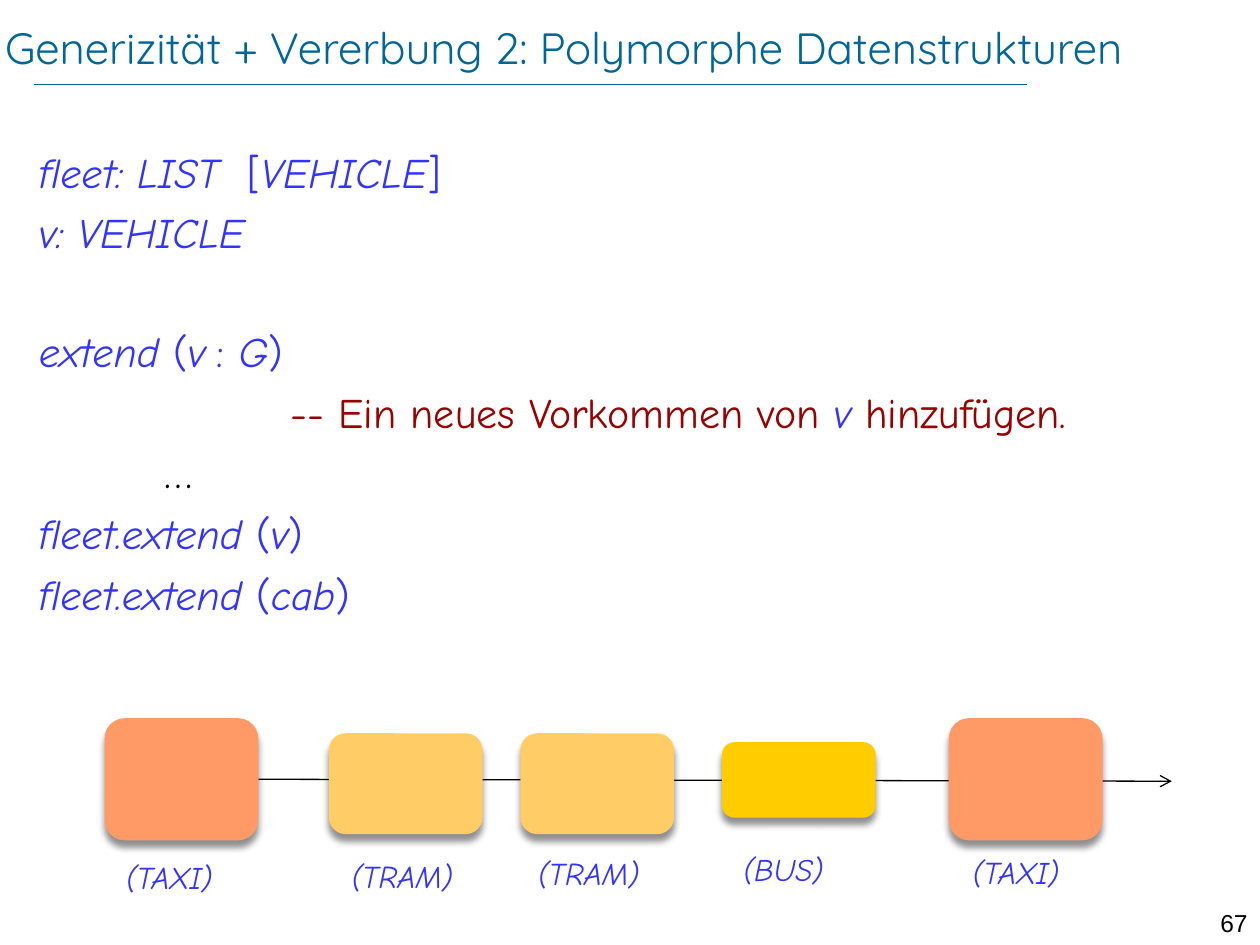
from dataclasses import dataclass

from lxml.etree import SubElement
from pptx import Presentation
from pptx.dml.color import RGBColor
from pptx.enum.shapes import MSO_CONNECTOR, MSO_SHAPE
from pptx.enum.text import MSO_ANCHOR, PP_ALIGN
from pptx.oxml.ns import qn
from pptx.util import Inches, Pt


@dataclass(frozen=True)
class Theme:
    title: str = "006699"
    code: str = "3333FF"
    comment: str = "990000"
    black: str = "000000"
    taxi: str = "FF9966"
    tram: str = "FFCC66"
    bus: str = "FFCC00"
    title_font: str = "Quicksand"
    body_font: str = "Comic Neue"
    number_font: str = "Arial"
    title_size: float = 25
    body_size: float = 24
    small_size: float = 20
    label_size: float = 18
    number_size: float = 14


THEME = Theme()
COLS, ROWS = 100, 75
LINE_GAP, BLANK_LINE = 5.8, 33.5

CODE = dict(name=THEME.body_font, size=THEME.body_size, color=THEME.code, italic=False)
NAME = CODE | dict(italic=True)
COMMENT = CODE | dict(color=THEME.comment)
PLAIN = CODE | dict(color=THEME.black)
LABEL = NAME | dict(size=THEME.label_size)
TITLE = dict(name=THEME.title_font, size=THEME.title_size, color=THEME.title)
NUMBER = dict(name=THEME.number_font, size=THEME.number_size, color=THEME.black)

# Each line: indent in inches, extra space before in points, runs
LISTING = [
    (0, 0, [("fleet: LIST", NAME), ("  [", CODE), ("VEHICLE", NAME), ("]", CODE)]),
    (0, 0, [("v: VEHICLE", NAME)]),
    (0, BLANK_LINE, [("extend", NAME), (" (", CODE), ("v", NAME),
                     (" ", NAME | dict(size=THEME.small_size)), (": ", CODE),
                     ("G", NAME), (")", CODE)]),
    (2, 0, [("-- Ein neues Vorkommen von ", COMMENT), ("v", NAME),
            (" hinzufügen.", COMMENT)]),
    (1, 0, [("…", PLAIN)]),
    (0, 0, [("fleet.extend ", NAME), ("(", CODE), ("v", NAME), (")", CODE)]),
    (0, 0, [("fleet.extend ", NAME), ("(", CODE), ("cab", NAME), (")", CODE)]),
]

# Kind: fill, top and height of the box, width of the label
KINDS = {
    "TAXI": (THEME.taxi, 57, 9.7, 10.6),
    "TRAM": (THEME.tram, 58.2, 8, 11.2),
    "BUS": (THEME.bus, 58.9, 6, 9.1),
}
BOX_WIDTH = 12.2
# Kind, left of the box, left and top of the label
FLEET = [
    ("TAXI", 8.3, 9, 67.6),
    ("TRAM", 26.1, 26.9, 67.5),
    ("TRAM", 41.3, 41.7, 67.3),
    ("BUS", 57.3, 58, 67),
    ("TAXI", 75.3, 76.2, 67.2),
]


class SlideBuilder:
    def __init__(self, prs):
        self.prs = prs
        self.s = prs.slides.add_slide(prs.slide_layouts[6])

    def grid(self, *lengths):
        """Turn alternating columns and rows into slide lengths."""
        units = (self.prs.slide_width / COLS, self.prs.slide_height / ROWS)
        return [round(n * units[i % 2]) for i, n in enumerate(lengths)]

    def text(self, box, lines, wrap=True, align=PP_ALIGN.LEFT, **frame):
        tf = self.s.shapes.add_textbox(*self.grid(*box)).text_frame
        for key, value in (dict(word_wrap=wrap) | frame).items():
            setattr(tf, key, value)
        for i, (indent, extra, runs) in enumerate(lines):
            p = tf.add_paragraph() if i else tf.paragraphs[0]
            p.alignment = align
            p.space_before = Pt(LINE_GAP + extra if i else 0)
            if indent:
                p._p.get_or_add_pPr().set("marL", str(Inches(indent)))
            for content, style in runs:
                self.run(p, content, style)

    def run(self, p, content, style):
        r = p.add_run()
        r.text = content
        values = dict(style)
        r.font.color.rgb = RGBColor.from_string(values.pop("color"))
        r.font.size = Pt(values.pop("size"))
        for key, value in values.items():
            setattr(r.font, key, value)

    def line(self, ends, color, width, arrow=False):
        c = self.s.shapes.add_connector(MSO_CONNECTOR.STRAIGHT, *self.grid(*ends))
        c.line.color.rgb = RGBColor.from_string(color)
        c.line.width = Pt(width)
        if arrow:
            SubElement(c.line._get_or_add_ln(), qn("a:tailEnd"), type="arrow")
        SubElement(c._element.spPr, qn("a:effectLst"))
        return c

    def box(self, place, color):
        """Rounded box with a soft shadow below."""
        sp = self.s.shapes.add_shape(MSO_SHAPE.ROUNDED_RECTANGLE, *self.grid(*place))
        sp.fill.solid()
        sp.fill.fore_color.rgb = RGBColor.from_string(color)
        sp.line.fill.background()
        sp.shadow.inherit = False
        effects = sp._element.spPr.find(qn("a:effectLst"))
        shadow = SubElement(effects, qn("a:outerShdw"), blurRad=str(Pt(4)),
                            dist=str(Pt(4)), dir="5400000", rotWithShape="0")
        tint = SubElement(shadow, qn("a:srgbClr"), val=THEME.black)
        SubElement(tint, qn("a:alpha"), val="43000")
        return sp


def main():
    prs = Presentation()
    prs.slide_width, prs.slide_height = Inches(10), Inches(7.5)
    b = SlideBuilder(prs)

    b.line((2.7, 6.7, 81.5, 6.7), THEME.title, 0.25)
    b.text((94.5, 71.6, 5.5, 2.4), [(0, 0, [("67", NUMBER)])], align=PP_ALIGN.RIGHT)
    no_margins = dict.fromkeys(
        ("margin_left", "margin_top", "margin_right", "margin_bottom"), 0)
    b.text((0.4, 1.3, 94.6, 4.8),
           [(0, 0, [("Generizität + Vererbung 2: Polymorphe Datenstrukturen", TITLE)])],
           vertical_anchor=MSO_ANCHOR.MIDDLE, **no_margins)
    b.text((2.1, 11.1, 95.3, 55.9), LISTING)

    chain = b.line((20.5, 61.9, 93, 62), THEME.black, 0.75, arrow=True)
    boxes = []
    for kind, left, label_left, label_top in FLEET:
        color, top, height, label_width = KINDS[kind]
        boxes.append(b.box((left, top, BOX_WIDTH, height), color))
        b.text((label_left, label_top, label_width, 4),
               [(0, 0, [(f"({kind})", LABEL)])], wrap=False)
    chain.begin_connect(boxes[0], 3)

    prs.save("out.pptx")


if __name__ == "__main__":
    main()
